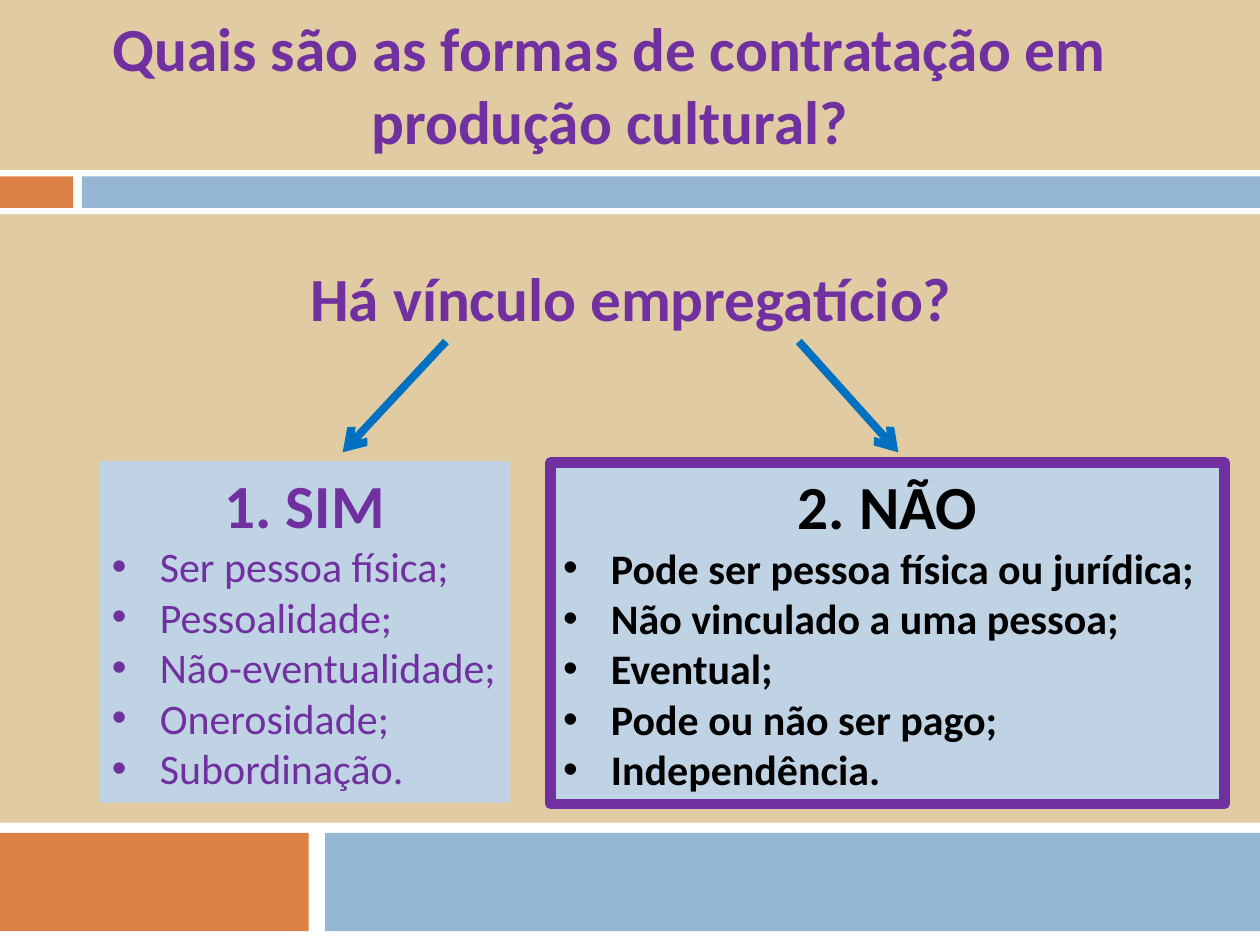
from pptx import Presentation
from pptx.dml.color import RGBColor
from pptx.enum.shapes import MSO_CONNECTOR, MSO_SHAPE
from pptx.enum.text import MSO_ANCHOR, PP_ALIGN
from pptx.oxml.ns import qn
from pptx.util import Inches, Pt
from lxml.etree import SubElement

SAND = RGBColor(0xE0, 0xCB, 0xA3)
WHITE = RGBColor(0xFF, 0xFF, 0xFF)
ORANGE = RGBColor(0xDD, 0x80, 0x47)
STEEL = RGBColor(0x94, 0xB6, 0xD2)
PALE_BLUE = RGBColor(0xBF, 0xD3, 0xE4)
PURPLE = RGBColor(0x70, 0x30, 0xA0)
BLACK = RGBColor(0, 0, 0)
BLUE = RGBColor(0x00, 0x70, 0xC0)

FONT = "Calibri"
HEADING_SIZE = 35
ITEM_SIZE = 24
BULLET_INDENT = Inches(0.38)


def write_text(paragraph, text, size=HEADING_SIZE, color=PURPLE, bold=True,
               align=PP_ALIGN.CENTER, bullet=False):
    paragraph.alignment = align
    if bullet:
        properties = paragraph._p.get_or_add_pPr()
        properties.set("marL", str(BULLET_INDENT))
        properties.set("indent", str(-BULLET_INDENT))
        SubElement(properties, qn("a:buFont"), typeface="Arial")
        SubElement(properties, qn("a:buChar"), char="•")
    run = paragraph.add_run()
    run.text = text
    run.font.name = FONT
    run.font.size = Pt(size)
    run.font.bold = bold
    run.font.color.rgb = color


def add_rectangle(slide, box, fill, border=None):
    shape = slide.shapes.add_shape(MSO_SHAPE.RECTANGLE, *map(Inches, box))
    shape.shadow.inherit = False
    shape.fill.solid()
    shape.fill.fore_color.rgb = fill
    if border is None:
        shape.line.fill.background()
    else:
        shape.line.color.rgb = border
        shape.line.width = Pt(6)
    return shape


def add_band(slide, box, split, gap, margin, bar_height):
    """White band with an orange bar, a gap and a blue bar."""
    left, top, width, height = box
    add_rectangle(slide, box, WHITE)
    bar_top = top + margin
    blue_left = left + split + gap
    add_rectangle(slide, (left, bar_top, split, bar_height), ORANGE)
    add_rectangle(slide, (blue_left, bar_top, left + width - blue_left, bar_height), STEEL)


def add_heading(slide, box, text):
    frame = slide.shapes.add_textbox(*map(Inches, box)).text_frame
    frame.word_wrap = True
    write_text(frame.paragraphs[0], text)


def add_arrow(slide, start, end):
    connector = slide.shapes.add_connector(
        MSO_CONNECTOR.STRAIGHT, *map(Inches, start + end))
    connector.line.color.rgb = BLUE
    connector.line.width = Pt(4.5)
    SubElement(connector.line._get_or_add_ln(), qn("a:tailEnd"), type="arrow")
    SubElement(connector._element.spPr, qn("a:effectLst"))


def add_answer(slide, box, title, items, color, bold_items=False, border=None):
    frame = add_rectangle(slide, box, PALE_BLUE, border).text_frame
    frame.word_wrap = True
    frame.vertical_anchor = MSO_ANCHOR.TOP
    write_text(frame.paragraphs[0], title, color=color)
    for item in items:
        write_text(frame.add_paragraph(), item, size=ITEM_SIZE, color=color,
                   bold=bold_items, align=PP_ALIGN.LEFT, bullet=True)


def main():
    presentation = Presentation()
    presentation.slide_width = Inches(10)
    presentation.slide_height = Inches(7.5)
    slide = presentation.slides.add_slide(presentation.slide_layouts[6])
    slide.background.fill.solid()
    slide.background.fill.fore_color.rgb = SAND

    # Bands below the title and at the foot
    add_band(slide, (0, 1.35, 10, 0.35), split=0.58, gap=0.07, margin=0.05, bar_height=0.25)
    add_band(slide, (0, 6.53, 10, 0.97), split=2.45, gap=0.13, margin=0.08, bar_height=0.78)

    # Title and question
    add_heading(slide, (0.31, 0.03, 9.06, 1.28),
                "Quais são as formas de contratação em produção cultural?")
    add_heading(slide, (0.48, 2.02, 9.06, 0.69), "Há vínculo empregatício?")

    # Arrows from the question to its answers
    add_arrow(slide, (3.54, 2.71), (2.72, 3.59))
    add_arrow(slide, (6.34, 2.71), (7.13, 3.59))

    # Answers
    add_answer(slide, (0.79, 3.66, 3.26, 2.71), "1. SIM",
               ["Ser pessoa física;", "Pessoalidade;", "Não-eventualidade;",
                "Onerosidade;", "Subordinação."], PURPLE)
    add_answer(slide, (4.37, 3.67, 5.35, 2.71), "2. NÃO",
               ["Pode ser pessoa física ou jurídica;", "Não vinculado a uma pessoa;",
                "Eventual;", "Pode ou não ser pago;", "Independência."],
               BLACK, bold_items=True, border=PURPLE)

    presentation.save("out.pptx")


if __name__ == "__main__":
    main()
